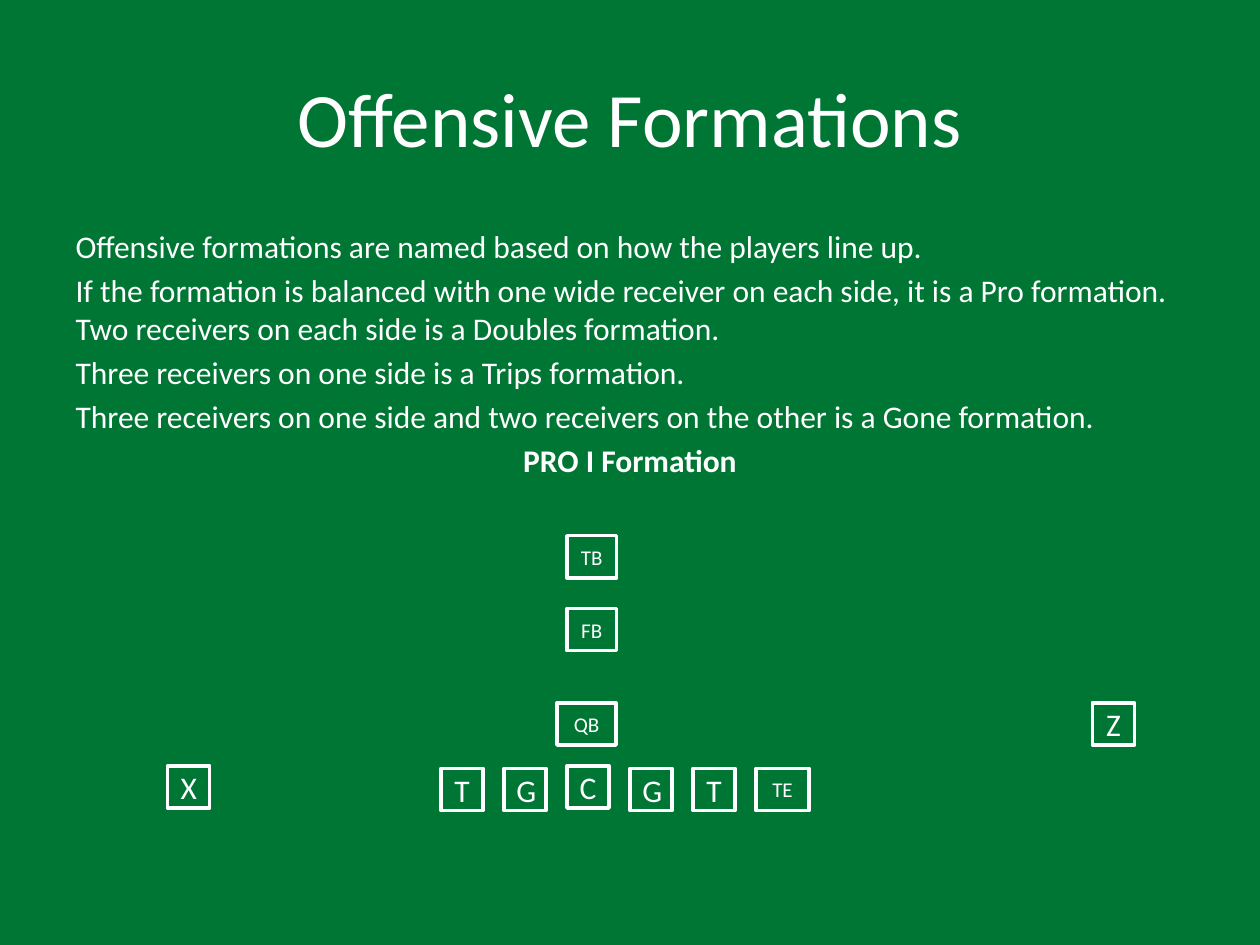
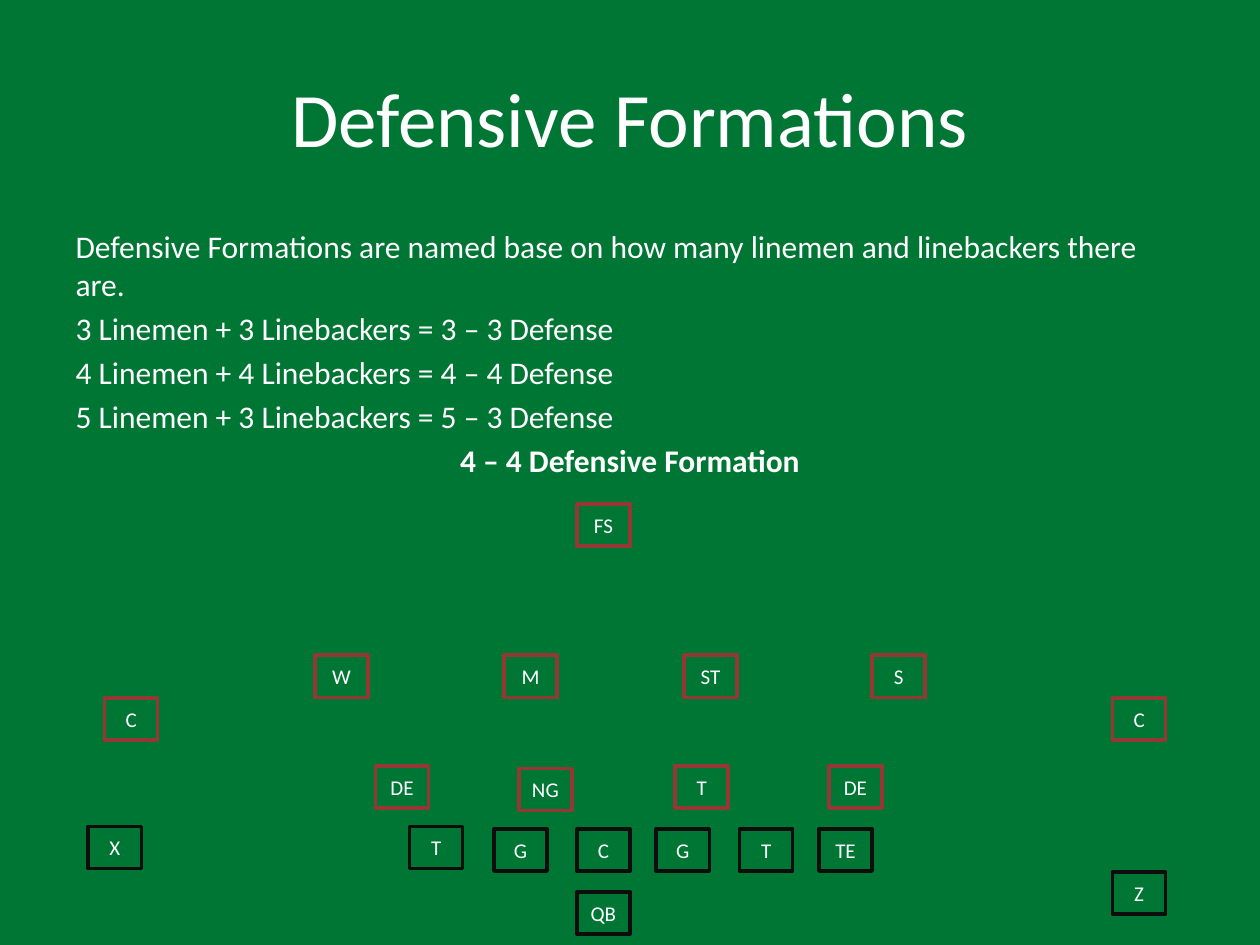
from lxml import etree
from pptx import Presentation
from pptx.dml.color import RGBColor
from pptx.enum import shapes, text
from pptx.oxml import ns
from pptx.util import Cm, Pt

FIELD_GREEN = RGBColor(0x00, 0x76, 0x35)
WHITE = RGBColor(0xFF, 0xFF, 0xFF)
DEFENSE_RED = RGBColor(0x95, 0x37, 0x35)
OFFENSE_BLACK = RGBColor(0x0D, 0x0D, 0x0D)

FONT = "Calibri"
BOX_HEIGHT = 0.85
NARROW, MEDIUM, WIDE, WIDEST = 0.85, 1.0, 1.07, 1.19

OFFENSE_TEXT = [
    "Offensive formations are named based on how the players line up.",
    "If the formation is balanced with one wide receiver on each side, it is a Pro formation. "
    "Two receivers on each side is a Doubles formation.",
    "Three receivers on one side is a Trips formation.",
    "Three receivers on one side and two receivers on the other is a Gone formation.",
]
DEFENSE_TEXT = [
    "Defensive Formations are named base on how many linemen and linebackers there are.",
    "3 Linemen + 3 Linebackers = 3 – 3 Defense",
    "4 Linemen + 4 Linebackers = 4 – 4 Defense",
    "5 Linemen + 3 Linebackers = 5 – 3 Defense",
]

PRO_BACKS = [
    ("TB", 11.43, 10.8, MEDIUM),
    ("FB", 11.43, 12.27, MEDIUM),
    ("QB", 11.23, 14.17, WIDEST),
    ("TE", 15.24, 15.49, WIDE),
]
PRO_RECEIVERS = [("X", 3.38, 15.44), ("Z", 22.02, 14.17)]
PRO_LINE = [("T", 15.49), ("G", 15.49), ("C", 15.44), ("G", 15.49), ("T", 15.49)]
LINE_LEFT, LINE_STEP = 8.89, 1.27

DEFENSE_ROWS = [
    (10.16, [("FS", 11.63)]),
    (13.21, [("W", 6.35), ("M", 10.16), ("ST", 13.79), ("S", 17.58)]),
    (14.07, [("C", 2.11), ("C", 22.43)]),
    (15.44, [("DE", 7.57), ("T", 13.61), ("DE", 16.71)]),
    (15.49, [("NG", 10.46)]),
]
OFFENSE_ROWS = [
    (16.66, [("X", 1.78), ("T", 8.26)]),
    (16.71, [("G", 9.96), ("C", 11.63), ("G", 13.23), ("T", 14.91), ("TE", 16.51)]),
    (17.58, [("Z", 22.43)]),
    (17.98, [("QB", 11.63)]),
]


def place(sp, left, top, width, height):
    sp.left, sp.top, sp.width, sp.height = Cm(left), Cm(top), Cm(width), Cm(height)


def style(p, size, align, bold=False):
    p.alignment = align
    for r in p.runs:
        r.font.name = FONT
        r.font.size = Pt(size)
        r.font.bold = bold
        r.font.color.rgb = WHITE


def remove_bullet(p):
    props = p._p.get_or_add_pPr()
    props.set("marL", "0")
    props.set("indent", "0")
    etree.SubElement(props, ns.qn("a:buNone"))


def add_formation_slide(prs, title, lines, caption):
    s = prs.slides.add_slide(prs.slide_layouts[1])
    place(s.shapes.title, 1.27, 0.76, 22.86, 3.18)
    s.shapes.title.text_frame.text = title
    style(s.shapes.title.text_frame.paragraphs[0], 44, text.PP_ALIGN.CENTER)

    body = s.placeholders[1]
    place(body, 1.27, 4.45, 22.86, 12.57)
    tf = body.text_frame
    tf.text = "\n".join(lines + [caption])
    tf.auto_size = text.MSO_AUTO_SIZE.NONE
    for i, p in enumerate(tf.paragraphs):
        is_caption = i == len(lines)
        remove_bullet(p)
        p.space_before = Pt(3.6 if i else 0)
        style(p, 18, text.PP_ALIGN.CENTER if is_caption else text.PP_ALIGN.LEFT, is_caption)
    return s


def add_player(s, label, left, top, width=WIDE, size=12, outline=WHITE):
    sp = s.shapes.add_shape(shapes.MSO_SHAPE.RECTANGLE, Cm(left), Cm(top), Cm(width), Cm(BOX_HEIGHT))
    sp.shadow.inherit = False
    sp.fill.solid()
    sp.fill.fore_color.rgb = FIELD_GREEN
    sp.line.color.rgb = outline
    sp.line.width = Pt(2)
    sp.text_frame.text = label
    sp.text_frame.vertical_anchor = text.MSO_ANCHOR.MIDDLE
    style(sp.text_frame.paragraphs[0], size, text.PP_ALIGN.CENTER)


def add_rows(s, rows, outline):
    for top, players in rows:
        for label, left in players:
            add_player(s, label, left, top, outline=outline)


def main():
    prs = Presentation()
    prs.slide_width, prs.slide_height = Cm(25.4), Cm(19.05)
    background = prs.slide_master.background.fill
    background.solid()
    background.fore_color.rgb = FIELD_GREEN

    s = add_formation_slide(prs, "Offensive Formations", OFFENSE_TEXT, "PRO I Formation")
    for i, (label, top) in enumerate(PRO_LINE):
        add_player(s, label, LINE_LEFT + i * LINE_STEP, top, NARROW, 18)
    for label, left, top in PRO_RECEIVERS:
        add_player(s, label, left, top, NARROW, 18)
    for label, left, top, width in PRO_BACKS:
        add_player(s, label, left, top, width)

    s = add_formation_slide(prs, "Defensive Formations", DEFENSE_TEXT, "4 – 4 Defensive Formation")
    add_rows(s, DEFENSE_ROWS, DEFENSE_RED)
    add_rows(s, OFFENSE_ROWS, OFFENSE_BLACK)

    prs.save("out.pptx")


if __name__ == "__main__":
    main()
